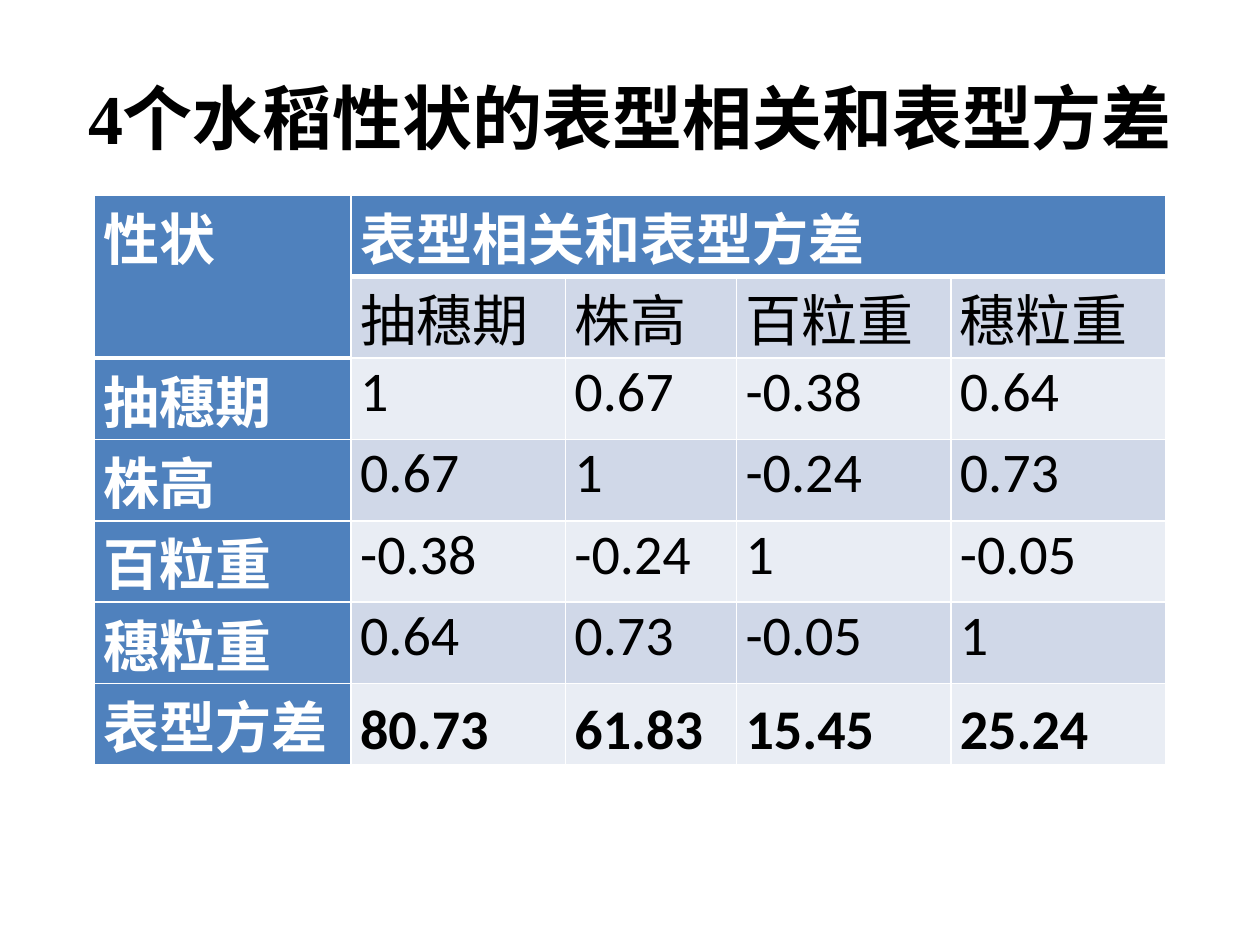
import lxml.etree
import pptx
import pptx.dml.color
import pptx.enum.text
import pptx.oxml.ns
import pptx.util

Cm = pptx.util.Cm
Pt = pptx.util.Pt
ALIGN = pptx.enum.text.PP_ALIGN
ANCHOR = pptx.enum.text.MSO_ANCHOR

# Content
TITLE = "4个水稻性状的表型相关和表型方差"
CORNER = "性状"
GROUP = "表型相关和表型方差"
TRAITS = ["抽穗期", "株高", "百粒重", "穗粒重"]
CORRELATIONS = [
    ["1", "0.67", "-0.38", "0.64"],
    ["0.67", "1", "-0.24", "0.73"],
    ["-0.38", "-0.24", "1", "-0.05"],
    ["0.64", "0.73", "-0.05", "1"],
]
VARIANCES = ["表型方差", "80.73", "61.83", "15.45", "25.24"]

ROWS = [
    [CORNER, GROUP, "", "", ""],
    ["", *TRAITS],
    *[[trait, *values] for trait, values in zip(TRAITS, CORRELATIONS)],
    VARIANCES,
]
COLUMN_WIDTHS = [5.18, 4.32, 3.45, 4.32, 4.32]
ROW_HEIGHT = 1.64

THEME = {
    "title_font": "Times New Roman", "title_size": 40,
    "table_font": "Calibri", "table_size": 32,
    "text": "000000", "header_text": "FFFFFF", "header": "4F81BD",
    "bands": ["E9EDF4", "D0D8E8"], "border": "FFFFFF",
    "thin": 1, "thick": 3,
}


def rgb(name):
    return pptx.dml.color.RGBColor.from_string(name)


def style_paragraph(para, font, size, color, bold, align):
    para.alignment = align
    para.font.name = font
    para.font.size = Pt(size)
    para.font.color.rgb = rgb(color)
    para.font.bold = bold


def in_header(row, column):
    return row == 0 or (row == 1 and column == 0)


def set_borders(cell, widths):
    properties = cell._tc.get_or_add_tcPr()
    for side, width in widths.items():
        line = lxml.etree.SubElement(
            properties, pptx.oxml.ns.qn("a:ln" + side), w=str(Pt(width)))
        fill = lxml.etree.SubElement(line, pptx.oxml.ns.qn("a:solidFill"))
        lxml.etree.SubElement(
            fill, pptx.oxml.ns.qn("a:srgbClr"), val=THEME["border"])


def add_title(slide):
    box = slide.shapes.add_textbox(Cm(1.27), Cm(0.76), Cm(22.86), Cm(3.18))
    frame = box.text_frame
    frame.word_wrap = True
    frame.vertical_anchor = ANCHOR.MIDDLE
    frame.text = TITLE
    style_paragraph(frame.paragraphs[0], THEME["title_font"],
                    THEME["title_size"], THEME["text"], True, ALIGN.CENTER)


def style_cell(cell, row, column):
    last_row = row == len(ROWS) - 1
    label = row == 0 or column == 0
    cell.text = ROWS[row][column]
    cell.margin_left = cell.margin_right = Cm(0.18)
    cell.margin_top = cell.margin_bottom = 0
    if last_row and not label:
        cell.vertical_anchor = ANCHOR.BOTTOM
    style_paragraph(
        cell.text_frame.paragraphs[0], THEME["table_font"], THEME["table_size"],
        THEME["header_text" if label else "text"], label or last_row,
        ALIGN.JUSTIFY if row < 2 else ALIGN.LEFT)

    # A thick rule runs below the header cells
    thin, thick = THEME["thin"], THEME["thick"]
    below_header = not in_header(row, column) and in_header(row - 1, column)
    set_borders(cell, {
        "L": thin, "R": thin,
        "T": thick if below_header else thin,
        "B": thick if in_header(row, column) else thin,
    })
    cell.fill.solid()
    cell.fill.fore_color.rgb = rgb(
        THEME["header"] if label else THEME["bands"][row % 2])


def add_trait_table(slide):
    frame = slide.shapes.add_table(
        len(ROWS), len(COLUMN_WIDTHS), Cm(1.9), Cm(3.94),
        Cm(sum(COLUMN_WIDTHS)), Cm(ROW_HEIGHT * len(ROWS)))
    table = frame.table
    for column, width in zip(table.columns, COLUMN_WIDTHS):
        column.width = Cm(width)
    for row in table.rows:
        row.height = Cm(ROW_HEIGHT)
    for row in range(len(ROWS)):
        for column in range(len(COLUMN_WIDTHS)):
            style_cell(table.cell(row, column), row, column)
    # Corner label spans two rows, group heading spans all traits
    table.cell(0, 0).merge(table.cell(1, 0))
    table.cell(0, 1).merge(table.cell(0, len(TRAITS)))


def main():
    deck = pptx.Presentation()
    deck.slide_width = Cm(25.4)
    deck.slide_height = Cm(19.05)
    slide = deck.slides.add_slide(deck.slide_layouts[6])
    add_title(slide)
    add_trait_table(slide)
    deck.save("out.pptx")


if __name__ == "__main__":
    main()
